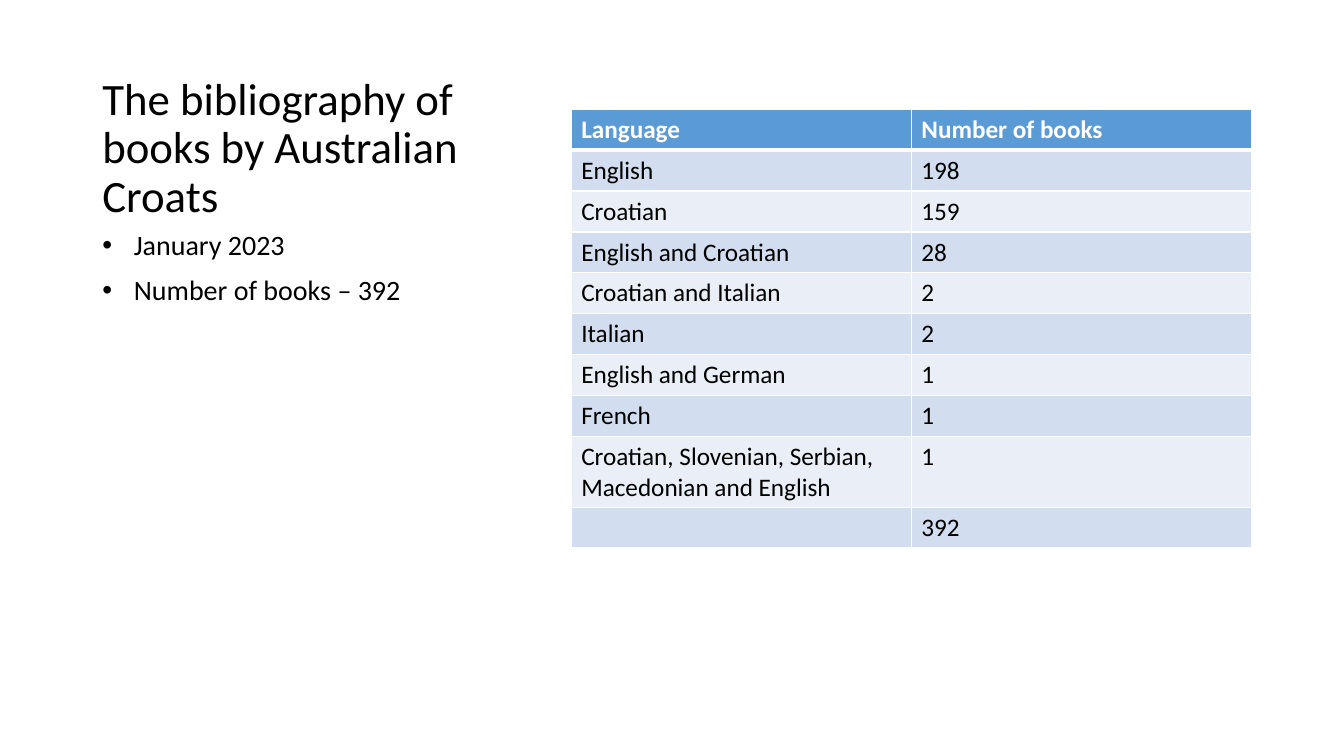
from lxml import etree
from pptx import Presentation
from pptx import util as u
from pptx.dml.color import RGBColor
from pptx.enum import text
from pptx.oxml import ns

PX = 9525  # EMU per px, 96 px to the inch
FONT = "Calibri"
BLACK, WHITE = "000000", "FFFFFF"
HEADER, BANDS = "5B9BD5", ("EAEFF7", "D2DEEF")


def style(p, size, color=BLACK, bold=False):
    p.font.name, p.font.size, p.font.bold = FONT, u.Pt(size), bold
    p.font.color.rgb = RGBColor.from_string(color)


def add_text(x, y, w, h, lines, size, anchor):
    """Add a text box with one paragraph per line and return its paragraphs."""
    tf = s.shapes.add_textbox(x * PX, y * PX, w * PX, h * PX).text_frame
    tf.word_wrap = True
    tf.vertical_anchor = anchor
    tf.text = "\n".join(lines)
    for p in tf.paragraphs:
        p.line_spacing = 0.9
        style(p, size)
    return tf.paragraphs


prs = Presentation()
prs.slide_width, prs.slide_height = 1280 * PX, 720 * PX
s = prs.slides.add_slide(prs.slide_layouts[6])

add_text(88, 48, 413, 168, ["The bibliography of books by Australian Croats"],
         32, text.MSO_ANCHOR.BOTTOM)

# Language table
rows = [
    ("Language", "Number of books"),
    ("English", "198"),
    ("Croatian", "159"),
    ("English and Croatian", "28"),
    ("Croatian and Italian", "2"),
    ("Italian", "2"),
    ("English and German", "1"),
    ("French", "1"),
    ("Croatian, Slovenian, Serbian, Macedonian and English", "1"),
    ("", "392"),
]
ROW_H, TALL_ROW_H, TALL_ROW = 39, 67, 8
table_h = ROW_H * (len(rows) - 1) + TALL_ROW_H
table = s.shapes.add_table(len(rows), 2, 544 * PX, 104 * PX, 648 * PX, table_h * PX).table

for i, row in enumerate(rows):
    table.rows[i].height = (TALL_ROW_H if i == TALL_ROW else ROW_H) * PX
    is_header = i == 0
    for j, value in enumerate(row):
        cell = table.cell(i, j)
        cell.text = value
        style(cell.text_frame.paragraphs[0], 18, WHITE if is_header else BLACK, is_header)
        tc_pr = cell._tc.get_or_add_tcPr()
        for side in "LRTB":
            thick = (i, side) in ((0, "B"), (1, "T"))
            ln = etree.SubElement(tc_pr, ns.qn(f"a:ln{side}"), w=str(u.Pt(3 if thick else 1)))
            fill = etree.SubElement(ln, ns.qn("a:solidFill"))
            etree.SubElement(fill, ns.qn("a:srgbClr"), val=WHITE)
        cell.fill.solid()
        cell.fill.fore_color.rgb = RGBColor.from_string(HEADER if is_header else BANDS[i % 2])

# Bulleted summary
for p in add_text(88, 216, 413, 400, ["January 2023", "Number of books – 392"],
                  20, text.MSO_ANCHOR.TOP):
    p.space_before = u.Pt(10)
    p_pr = p._p.get_or_add_pPr()
    p_pr.set("marL", str(30 * PX))
    p_pr.set("indent", str(-30 * PX))
    bullet_font = etree.Element(ns.qn("a:buFont"), typeface="Arial")
    bullet = etree.Element(ns.qn("a:buChar"), char="•")
    p_pr.find(ns.qn("a:defRPr")).addprevious(bullet_font)
    bullet_font.addnext(bullet)

prs.save("out.pptx")
